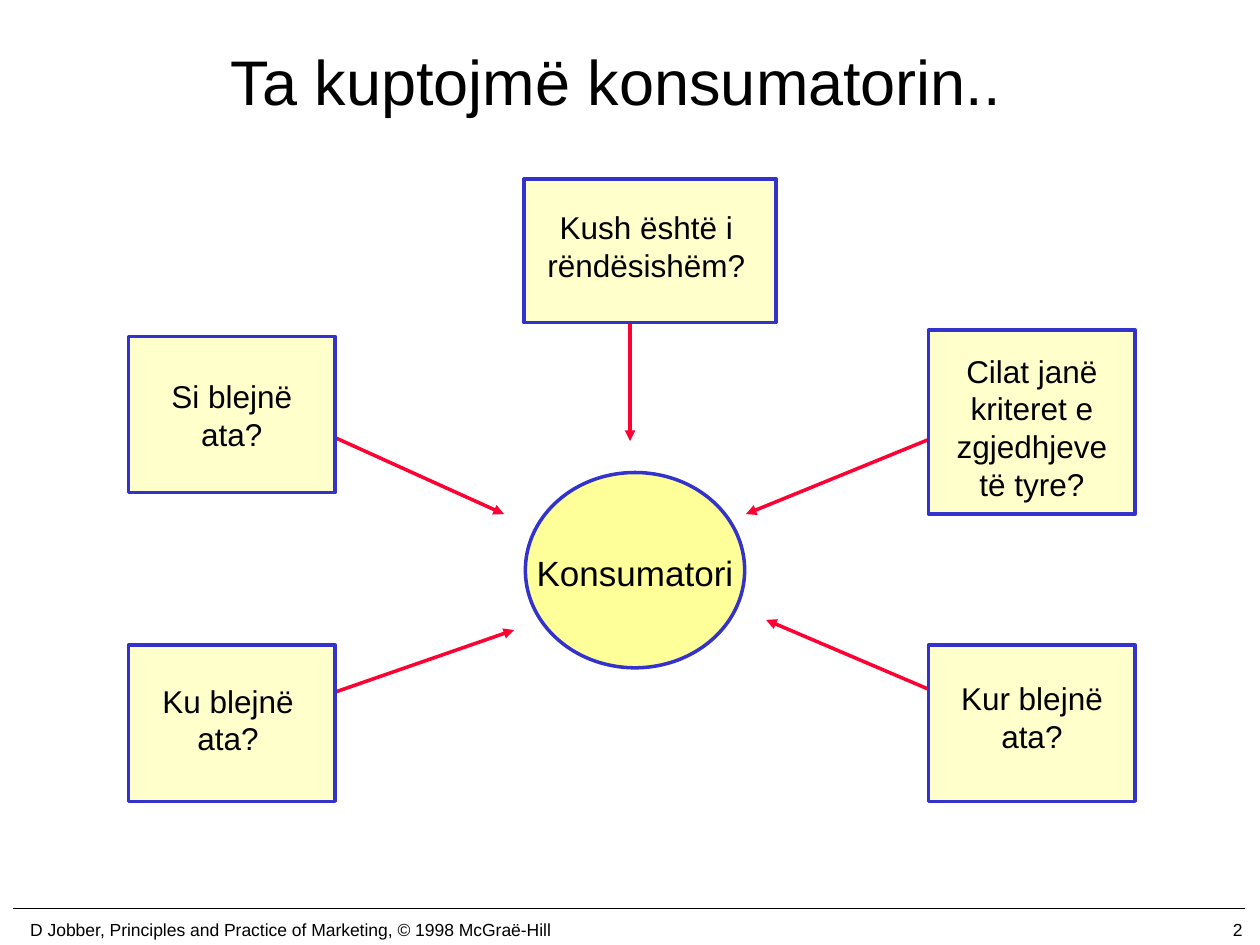
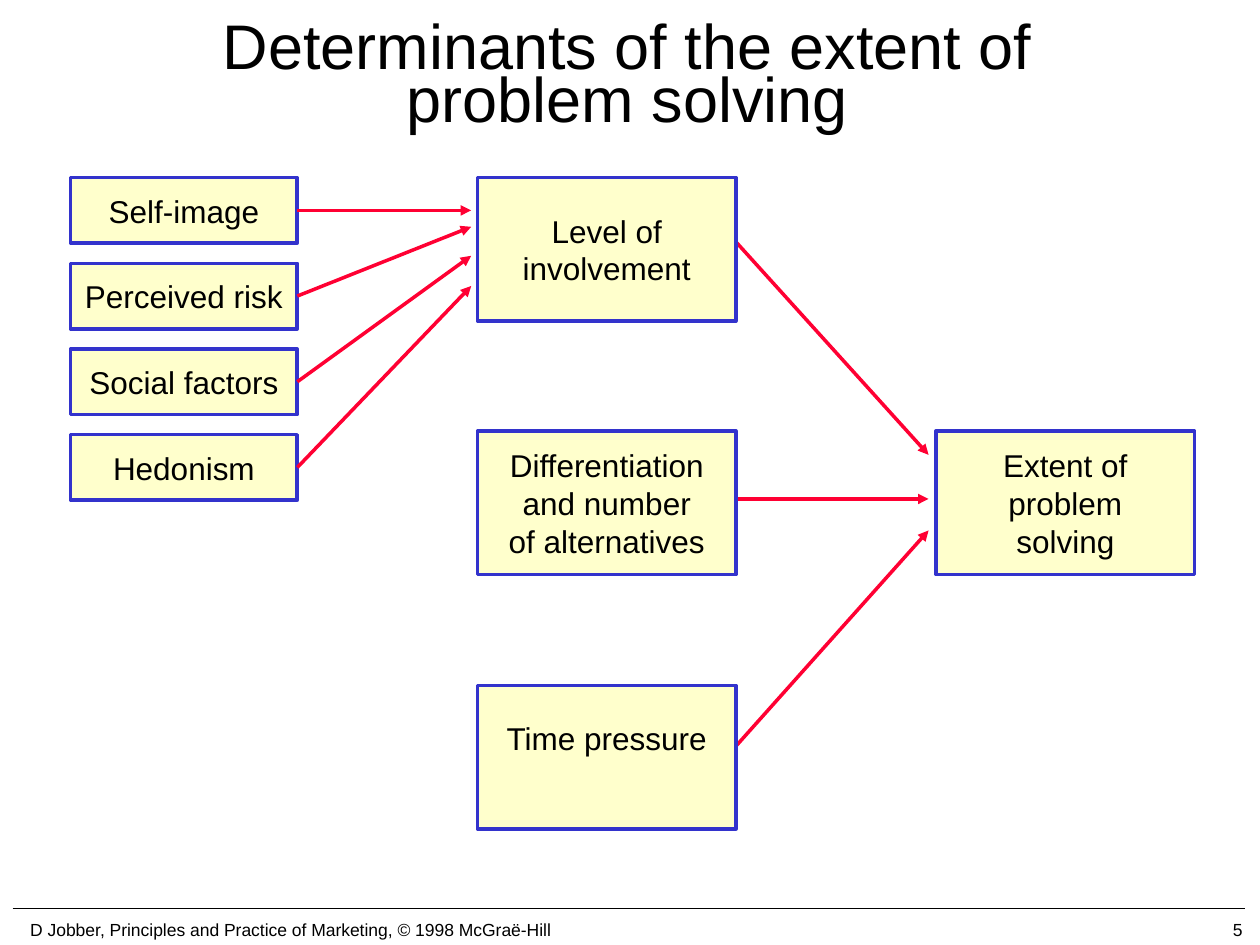
from dataclasses import dataclass

from lxml.etree import SubElement
from pptx import Presentation
from pptx.dml.color import RGBColor
from pptx.enum.shapes import MSO_CONNECTOR, MSO_SHAPE
from pptx.enum.text import MSO_ANCHOR, MSO_AUTO_SIZE, PP_ALIGN
from pptx.oxml.ns import qn
from pptx.shapes.autoshape import Shape
from pptx.shapes.connector import Connector
from pptx.slide import Slide
from pptx.text.text import TextFrame
from pptx.util import Inches, Pt

BLACK = RGBColor(0x00, 0x00, 0x00)
RED = RGBColor(0xFF, 0x00, 0x33)
BLUE = RGBColor(0x33, 0x33, 0xCC)
CREAM = RGBColor(0xFF, 0xFF, 0xCC)
YELLOW = RGBColor(0xFF, 0xFF, 0x99)
FONT = "Arial"
SOURCE = "D Jobber, Principles and Practice of Marketing, © 1998 McGraë-Hill"
RIGHT_SIDE = 3


@dataclass(frozen=True)
class Box:
    text: str
    left: float
    top: float
    width: float
    height: float
    shift_x: float = 0
    shift_y: float = 0
    margin: float = 0.15
    wrap: bool = True
    kind: MSO_SHAPE = MSO_SHAPE.RECTANGLE
    fill: RGBColor = CREAM
    size: int = 18


@dataclass(frozen=True)
class Arrow:
    x1: float
    y1: float
    x2: float
    y2: float


def style_text(tf: TextFrame, text: str, size: int, align: PP_ALIGN) -> None:
    tf.text = text
    tf.vertical_anchor = MSO_ANCHOR.MIDDLE
    p = tf.paragraphs[0]
    p.alignment = align
    for r in p.runs:
        r.font.name = FONT
        r.font.size = Pt(size)
        r.font.color.rgb = BLACK


def add_box(s: Slide, box: Box) -> Shape:
    """Draw a box; unequal margins move its centred label by the shifts."""
    sp = s.shapes.add_shape(box.kind, Inches(box.left), Inches(box.top),
                            Inches(box.width), Inches(box.height))
    sp.shadow.inherit = False
    sp.fill.solid()
    sp.fill.fore_color.rgb = box.fill
    sp.line.color.rgb = BLUE
    sp.line.width = Pt(2)
    tf = sp.text_frame
    tf.word_wrap = box.wrap
    tf.margin_left = Inches(box.margin + box.shift_x)
    tf.margin_right = Inches(box.margin - box.shift_x)
    tf.margin_top = Inches(0.05 + max(0, 2 * box.shift_y))
    tf.margin_bottom = Inches(0.05 + max(0, -2 * box.shift_y))
    style_text(tf, box.text, box.size, PP_ALIGN.CENTER)
    return sp


def add_line(s: Slide, path: Arrow, color: RGBColor, width: float) -> Connector:
    line = s.shapes.add_connector(MSO_CONNECTOR.STRAIGHT, Inches(path.x1), Inches(path.y1),
                                  Inches(path.x2), Inches(path.y2))
    line.line.color.rgb = color
    line.line.width = Pt(width)
    SubElement(line._element.spPr, qn("a:effectLst"))
    return line


def add_arrow(s: Slide, arrow: Arrow) -> Connector:
    line = add_line(s, arrow, RED, 2)
    SubElement(line.line._get_or_add_ln(), qn("a:tailEnd"), type="triangle")
    return line


def add_footer_text(s: Slide, text: str, left: float, width: float, align: PP_ALIGN) -> None:
    tf = s.shapes.add_textbox(Inches(left), Inches(7.25), Inches(width), Inches(0.25)).text_frame
    tf.word_wrap = True
    style_text(tf, text, 10, align)


def add_slide(prs: Presentation, title: str, title_left: float, number: int) -> Slide:
    s = prs.slides.add_slide(prs.slide_layouts[5])
    sp = s.shapes.title
    sp.left, sp.top = Inches(title_left), Inches(0.01)
    sp.width, sp.height = Inches(8.5), Inches(1.25)
    sp.text_frame.auto_size = MSO_AUTO_SIZE.NONE
    style_text(sp.text_frame, title, 36, PP_ALIGN.CENTER)
    add_line(s, Arrow(0.1, 7.21, 9.88, 7.21), BLACK, 1)
    add_footer_text(s, str(number), 7.88, 2.08, PP_ALIGN.RIGHT)
    add_footer_text(s, SOURCE, 0, 4.61, PP_ALIGN.CENTER)
    return s


def build_consumer_slide(prs: Presentation) -> None:
    s = add_slide(prs, "Ta kuptojmë konsumatorin..", 0.64, 2)
    arrows = [
        Arrow(2.61, 5.51, 4.08, 5),
        Arrow(2.63, 3.46, 4, 4.08),
        Arrow(7.44, 3.46, 5.92, 4.08),
        Arrow(7.44, 5.5, 6.08, 4.92),
        Arrow(5, 2.44, 5, 3.5),
    ]
    boxes = [
        Box("Cilat janë kriteret e zgjedhjeve të tyre?", 7.37, 2.62, 1.64, 1.46, shift_y=0.04),
        Box("Si blejnë ata?", 1.02, 2.67, 1.64, 1.24),
        Box("Konsumatori", 4.17, 3.75, 1.74, 1.55, shift_y=0.02, wrap=False,
            kind=MSO_SHAPE.OVAL, fill=YELLOW, size=20),
        Box("Kur blejnë ata?", 7.37, 5.12, 1.64, 1.24, shift_y=-0.05),
        Box("Ku blejnë ata?", 1.02, 5.12, 1.64, 1.24, shift_x=-0.03, shift_y=-0.03),
        Box("Kush është i rëndësishëm?", 4.16, 1.42, 2, 1.14, shift_x=-0.03, shift_y=-0.04),
    ]
    for arrow in arrows:
        add_arrow(s, arrow)
    for box in boxes:
        add_box(s, box)


def build_determinants_slide(prs: Presentation) -> None:
    s = add_slide(prs, "Determinants of the extent of problem solving", 0.73, 5)
    s.shapes.title.text_frame.paragraphs[0].line_spacing = 0.7

    for arrow in (Arrow(5.66, 1.72, 7.37, 3.61),
                  Arrow(5.69, 3.96, 7.37, 3.96),
                  Arrow(5.78, 5.99, 7.37, 4.21)):
        add_arrow(s, arrow)

    factors = [("Self-image", 1.67), ("Perceived risk", 1.8),
               ("Social factors", 2.03), ("Hedonism", 2.27)]
    for i, (factor, arrow_end) in enumerate(factors):
        top = 1.41 + 0.68 * i
        sp = add_box(s, Box(factor, 0.56, top, 1.8, 0.52, wrap=False))
        arrow = add_arrow(s, Arrow(2.36, top + 0.26, 3.74, arrow_end))
        arrow.begin_connect(sp, RIGHT_SIDE)

    for text, left, top, shift_y in (
        ("Level of involvement", 3.79, 1.41, 0),
        ("Differentiation and number of alternatives", 3.79, 3.42, 0),
        ("Time pressure", 3.79, 5.44, -0.15),
        ("Extent of problem solving", 7.43, 3.42, 0),
    ):
        add_box(s, Box(text, left, top, 2.05, 1.14, shift_y=shift_y, margin=0.23))


def main() -> None:
    prs = Presentation()
    prs.slide_width, prs.slide_height = Inches(10), Inches(7.5)
    build_consumer_slide(prs)
    build_determinants_slide(prs)
    prs.save("out.pptx")


if __name__ == "__main__":
    main()
